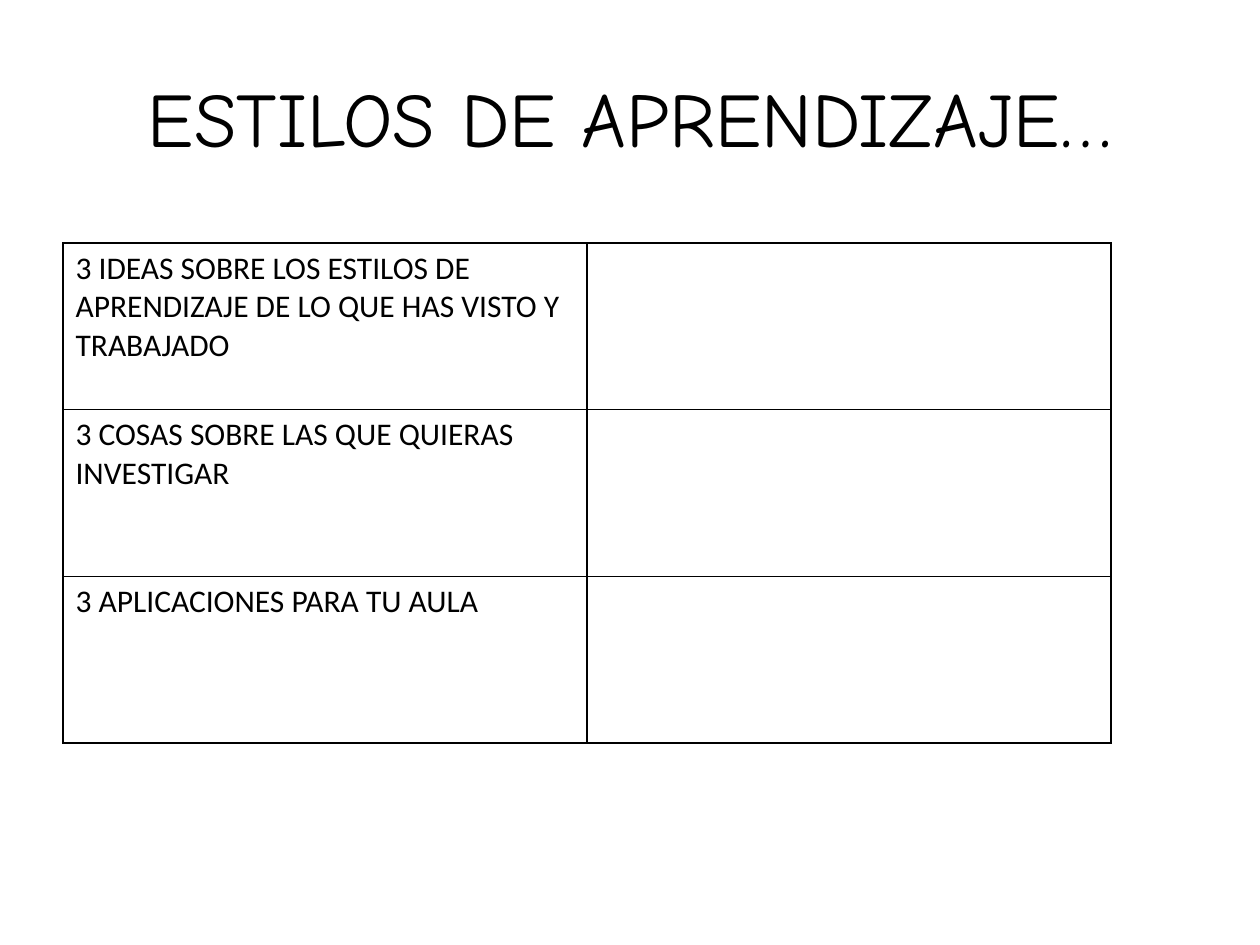
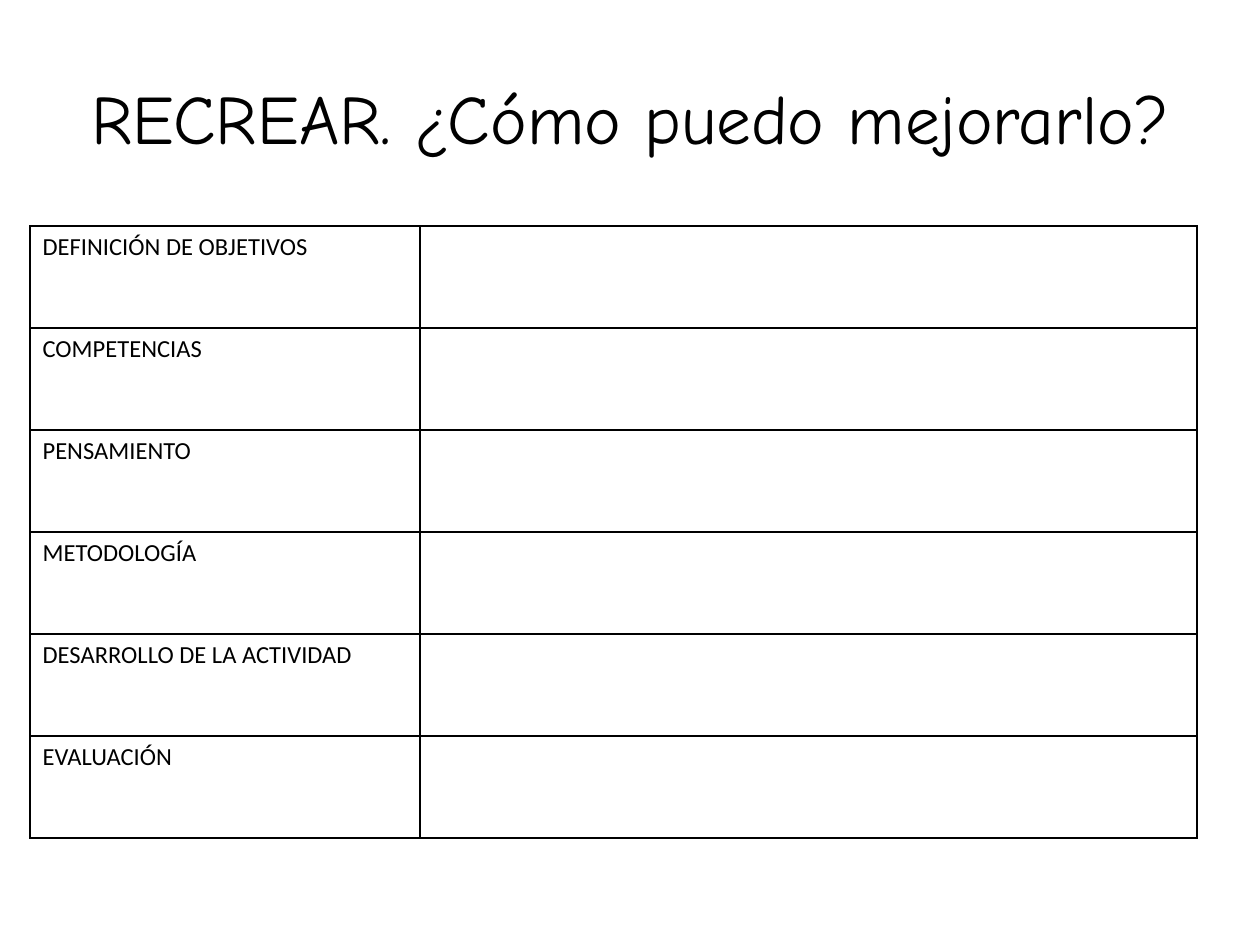
from dataclasses import dataclass

from lxml.etree import SubElement
from pptx import Presentation
from pptx.dml.color import RGBColor
from pptx.enum.text import MSO_ANCHOR, MSO_AUTO_SIZE, PP_ALIGN
from pptx.oxml.ns import qn
from pptx.util import Emu, Pt

PX_PER_INCH = 126
TITLE_ONLY = 5


def px(n: int) -> Emu:
    return Emu(round(n * 914400 / PX_PER_INCH))


@dataclass(frozen=True)
class Theme:
    ink: str = "000000"
    paper: str = "FFFFFF"
    title_font: str = "Comic Neue"
    body_font: str = "Calibri"
    title_size: float = 44
    long_title_size: float = 39.6
    prompt_size: float = 18
    section_size: float = 14
    border: float = 1


@dataclass(frozen=True)
class Worksheet:
    title: str
    title_size: float
    left: int
    top: int
    col_widths: tuple[int, int]
    height: int
    labels: tuple[str, ...]
    label_size: float


THEME = Theme()

WORKSHEETS = (
    Worksheet(
        "ESTILOS DE APRENDIZAJE…", THEME.title_size,
        63, 243, (524, 524), 500,
        (
            "3 IDEAS SOBRE LOS ESTILOS DE APRENDIZAJE DE LO QUE HAS VISTO Y TRABAJADO",
            "3 COSAS SOBRE LAS QUE QUIERAS INVESTIGAR",
            "3 APLICACIONES PARA TU AULA",
        ),
        THEME.prompt_size,
    ),
    Worksheet(
        "RECREAR. ¿Cómo puedo mejorarlo?", THEME.long_title_size,
        30, 226, (390, 777), 612,
        (
            "DEFINICIÓN DE OBJETIVOS",
            "COMPETENCIAS",
            "PENSAMIENTO",
            "METODOLOGÍA",
            "DESARROLLO DE LA ACTIVIDAD",
            "EVALUACIÓN",
        ),
        THEME.section_size,
    ),
)


def format_text(tf, font: str, size: float) -> None:
    for p in tf.paragraphs:
        for r in p.runs:
            r.font.name = font
            r.font.size = Pt(size)
            r.font.color.rgb = RGBColor.from_string(THEME.ink)


def add_title(s, text: str, size: float) -> None:
    sp = s.shapes.title
    sp.left, sp.top, sp.width, sp.height = map(px, (63, 38, 1134, 158))
    tf = sp.text_frame
    tf.text = text
    tf.word_wrap = True
    tf.auto_size = MSO_AUTO_SIZE.NONE
    tf.vertical_anchor = MSO_ANCHOR.MIDDLE
    tf.paragraphs[0].alignment = PP_ALIGN.CENTER
    format_text(tf, THEME.title_font, size)


def outline_cell(cell) -> None:
    tc_pr = cell._tc.get_or_add_tcPr()
    for side in ("L", "R", "T", "B"):
        ln = SubElement(tc_pr, qn(f"a:ln{side}"), w=str(Pt(THEME.border)))
        fill = SubElement(ln, qn("a:solidFill"))
        SubElement(fill, qn("a:srgbClr"), val=THEME.ink)
    cell.fill.background()


def add_worksheet_table(s, sheet: Worksheet) -> None:
    table = s.shapes.add_table(
        len(sheet.labels), len(sheet.col_widths),
        px(sheet.left), px(sheet.top),
        px(sum(sheet.col_widths)), px(sheet.height),
    ).table
    table.first_row = False
    table.horz_banding = False
    for col, width in zip(table.columns, sheet.col_widths):
        col.width = px(width)
    for cell in table.iter_cells():
        outline_cell(cell)
    for i, label in enumerate(sheet.labels):
        tf = table.cell(i, 0).text_frame
        tf.text = label
        format_text(tf, THEME.body_font, sheet.label_size)


def add_worksheet(prs, sheet: Worksheet) -> None:
    s = prs.slides.add_slide(prs.slide_layouts[TITLE_ONLY])
    s.background.fill.solid()
    s.background.fill.fore_color.rgb = RGBColor.from_string(THEME.paper)
    add_title(s, sheet.title, sheet.title_size)
    add_worksheet_table(s, sheet)


def main() -> None:
    prs = Presentation()
    prs.slide_width, prs.slide_height = px(1260), px(945)
    for sheet in WORKSHEETS:
        add_worksheet(prs, sheet)
    prs.save("out.pptx")


if __name__ == "__main__":
    main()
